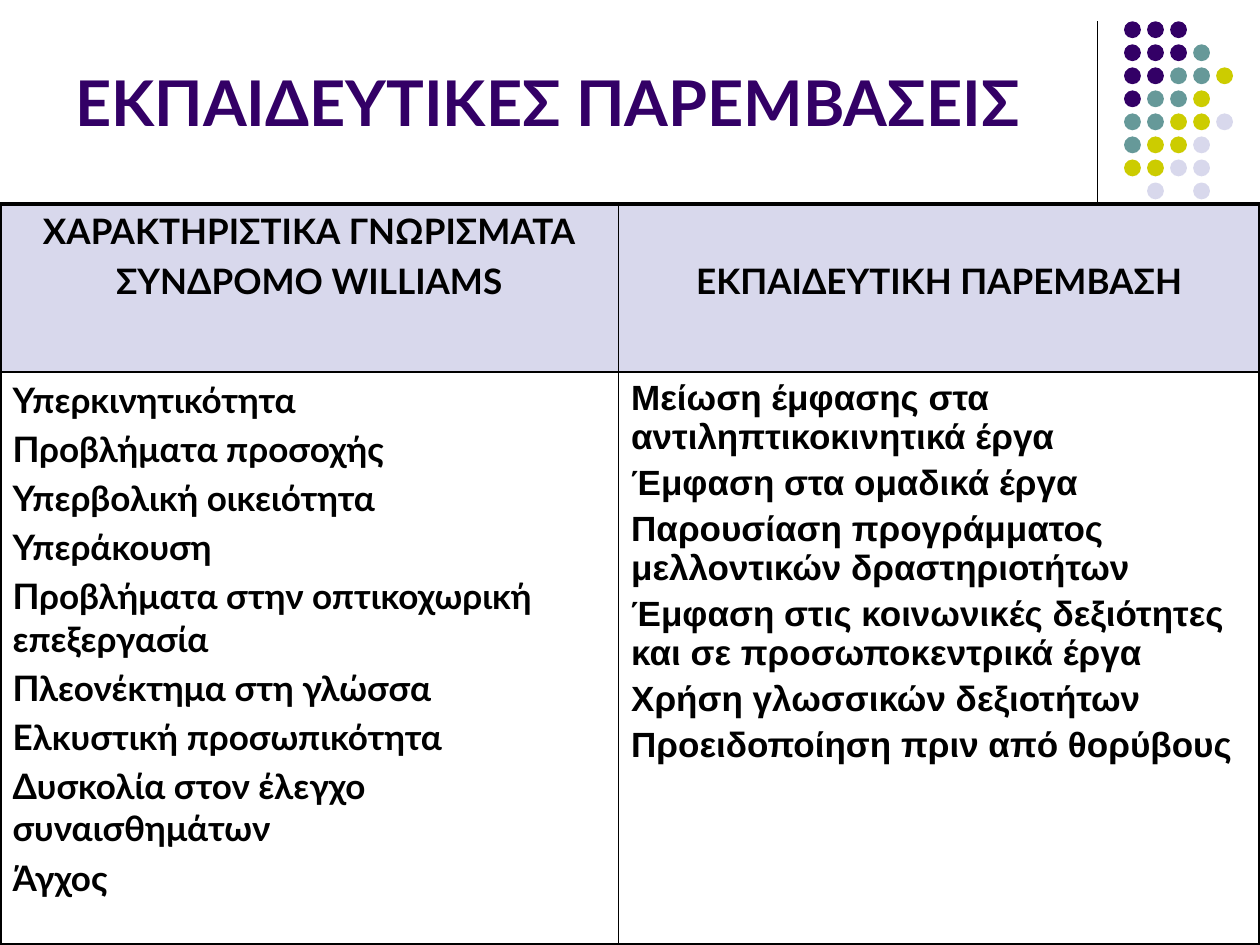
import pptx
import pptx.dml.color
import pptx.enum.shapes
import pptx.enum.text
import pptx.oxml
import pptx.oxml.ns
import pptx.util

Cm, Pt = pptx.util.Cm, pptx.util.Pt
ALIGN = pptx.enum.text.PP_ALIGN

COLOURS = {
    "violet": "330066",
    "teal": "669999",
    "lime": "CCCC00",
    "lavender": "D8D8EC",
    "black": "000000",
    "white": "FFFFFF",
}

# One letter per dot; a space leaves a gap
DOT_ROWS = ["VVV", "VVVT", "VVTTL", "VTTL", "TTLLP", "TLLP", "LLPP", " P P"]
DOT_COLOURS = {"V": "violet", "T": "teal", "L": "lime", "P": "lavender"}

TRAITS = [
    "Υπερκινητικότητα",
    "Προβλήματα προσοχής",
    "Υπερβολική οικειότητα",
    "Υπεράκουση",
    "Προβλήματα στην οπτικοχωρική επεξεργασία",
    "Πλεονέκτημα στη γλώσσα",
    "Ελκυστική προσωπικότητα",
    "Δυσκολία στον έλεγχο συναισθημάτων",
    "Άγχος",
]
INTERVENTIONS = [
    "Μείωση έμφασης στα αντιληπτικοκινητικά έργα",
    "Έμφαση στα ομαδικά έργα",
    "Παρουσίαση προγράμματος μελλοντικών δραστηριοτήτων",
    "Έμφαση στις κοινωνικές δεξιότητες και σε προσωποκεντρικά έργα",
    "Χρήση γλωσσικών δεξιοτήτων",
    "Προειδοποίηση πριν από θορύβους",
]


def rgb(name):
    return pptx.dml.color.RGBColor.from_string(COLOURS[name])


class SlideBuilder:
    """Holds the text style and the current slide."""

    font = "Lato"
    outer_border = 2.25
    inner_border = 1

    def __init__(self, slide):
        self.slide = slide

    def paragraphs(self, frame, lines, size, colour="black", font=None,
                   align=ALIGN.LEFT):
        frame.word_wrap = True
        for index, line in enumerate(lines):
            para = frame.paragraphs[0] if index == 0 else frame.add_paragraph()
            para.alignment = align
            para.space_before = Pt(size * 0.2)
            span = para.add_run()
            span.text = line
            span.font.name = font or self.font
            span.font.size = Pt(size)
            span.font.bold = True
            span.font.color.rgb = rgb(colour)

    def title(self, text, left, top, width, height):
        box = self.slide.shapes.add_textbox(Cm(left), Cm(top), Cm(width), Cm(height))
        box.text_frame.vertical_anchor = pptx.enum.text.MSO_ANCHOR.BOTTOM
        self.paragraphs(box.text_frame, [text], 36, "violet")

    def rule(self, x, top, bottom):
        line = self.slide.shapes.add_connector(
            pptx.enum.shapes.MSO_CONNECTOR.STRAIGHT, Cm(x), Cm(top), Cm(x), Cm(bottom))
        line.line.color.rgb = rgb("black")
        line.line.width = Pt(0.75)
        line._element.spPr.append(pptx.oxml.parse_xml(
            f"<a:effectLst {pptx.oxml.ns.nsdecls('a')}/>"))

    def dot(self, left, top, size, colour):
        dot = self.slide.shapes.add_shape(
            pptx.enum.shapes.MSO_SHAPE.OVAL, Cm(left), Cm(top), Cm(size), Cm(size))
        dot.shadow.inherit = False
        dot.fill.solid()
        dot.fill.fore_color.rgb = rgb(colour)
        dot.line.fill.background()

    def table(self, left, top, widths, heights):
        table = self.slide.shapes.add_table(
            len(heights), len(widths), Cm(left), Cm(top),
            Cm(sum(widths)), Cm(sum(heights))).table
        table.first_row = table.horz_banding = False
        for column, width in zip(table.columns, widths):
            column.width = Cm(width)
        for row, height in zip(table.rows, heights):
            row.height = Cm(height)
        for row in range(len(heights)):
            for column in range(len(widths)):
                cell = table.cell(row, column)
                self.borders(cell, {
                    "L": column == 0,
                    "R": column == len(widths) - 1,
                    "T": row == 0,
                    "B": row == len(heights) - 1,
                })
                cell.fill.solid()
                cell.fill.fore_color.rgb = rgb("lavender" if row == 0 else "white")
        return table

    def borders(self, cell, outer_sides):
        properties = cell._tc.get_or_add_tcPr()
        for side, is_outer in outer_sides.items():
            width = Pt(self.outer_border if is_outer else self.inner_border)
            properties.append(pptx.oxml.parse_xml(
                f'<a:ln{side} {pptx.oxml.ns.nsdecls("a")} w="{width}"><a:solidFill>'
                f'<a:srgbClr val="{COLOURS["black"]}"/></a:solidFill></a:ln{side}>'))


def main():
    deck = pptx.Presentation()
    deck.slide_width, deck.slide_height = Cm(25.4), Cm(19.05)
    page = SlideBuilder(deck.slides.add_slide(deck.slide_layouts[6]))

    # Corner decoration
    page.rule(22.12, 0.43, 4.65)
    step = 3.25 / (len(DOT_ROWS) - 1)
    for row, letters in enumerate(DOT_ROWS):
        for column, letter in enumerate(letters):
            if letter in DOT_COLOURS:
                page.dot(22.66 + column * step, 0.43 + row * step, 0.34,
                         DOT_COLOURS[letter])

    # Title
    page.title("ΕΚΠΑΙΔΕΥΤΙΚΕΣ ΠΑΡΕΜΒΑΣΕΙΣ", 1.27, 0.33, 20.96, 2.59)

    # Traits and matching interventions
    table = page.table(0, 4.11, [12.47, 12.93], [3.39, 11.54])
    page.paragraphs(table.cell(0, 0).text_frame,
                    ["ΧΑΡΑΚΤΗΡΙΣΤΙΚΑ ΓΝΩΡΙΣΜΑΤΑ", "ΣΥΝΔΡΟΜΟ WILLIAMS"],
                    20, align=ALIGN.CENTER)
    # The second heading sits level with the second line of the first
    table.cell(0, 1).margin_top = Cm(1.12)
    page.paragraphs(table.cell(0, 1).text_frame, ["ΕKΠΑΙΔΕΥΤΙΚΗ ΠΑΡΕΜΒΑΣΗ"],
                    20, align=ALIGN.CENTER)
    page.paragraphs(table.cell(1, 0).text_frame, TRAITS, 20)
    page.paragraphs(table.cell(1, 1).text_frame, INTERVENTIONS, 20, font="Arial")

    deck.save("out.pptx")


if __name__ == "__main__":
    main()
